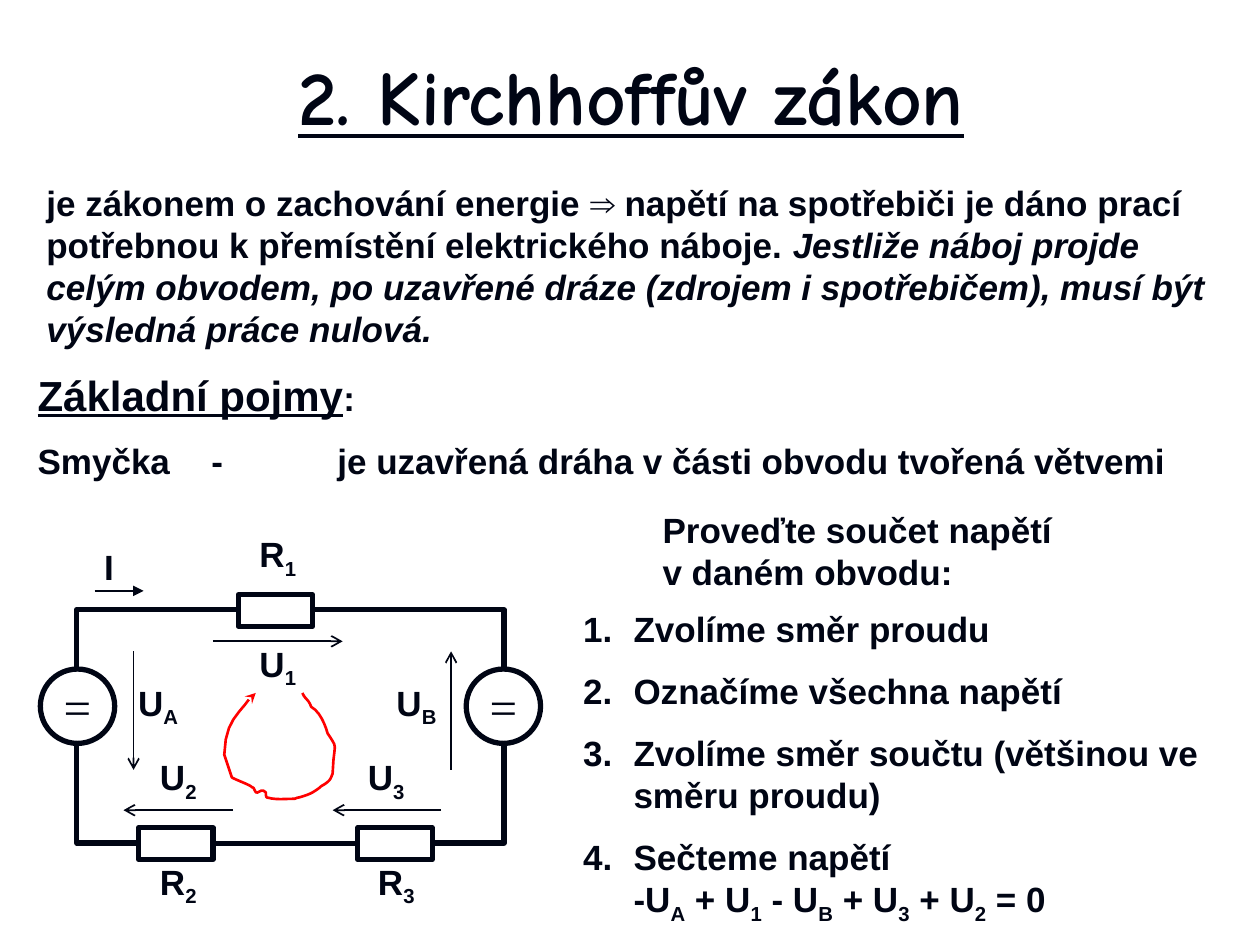
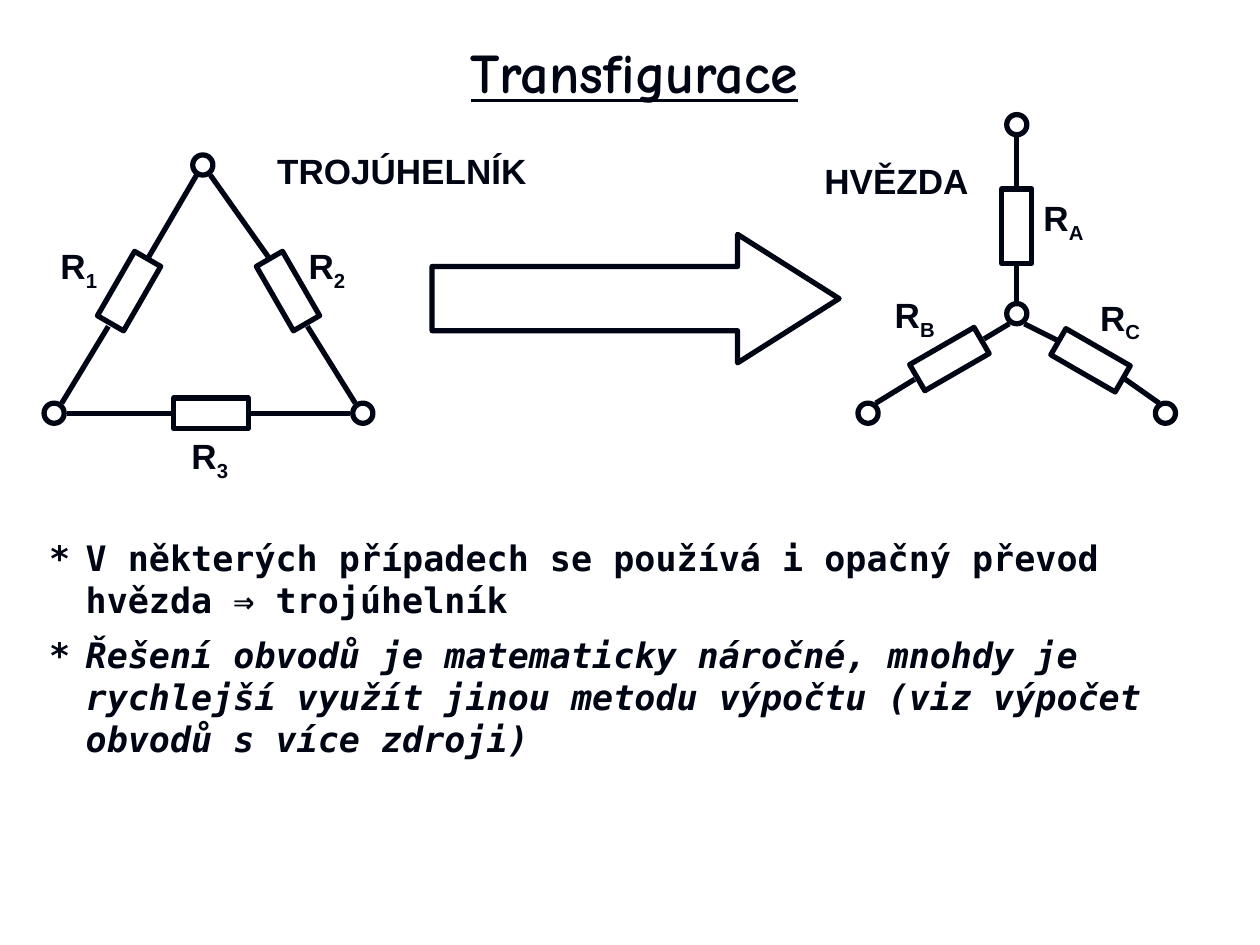
from lxml import etree
from pptx import Presentation
from pptx.dml.color import RGBColor
from pptx.enum.shapes import MSO_CONNECTOR, MSO_SHAPE
from pptx.enum.text import MSO_ANCHOR, PP_ALIGN
from pptx.oxml.ns import qn
from pptx.util import Inches, Pt

STRAIGHT = MSO_CONNECTOR.STRAIGHT
RECTANGLE, OVAL, RIGHT_ARROW = MSO_SHAPE.RECTANGLE, MSO_SHAPE.OVAL, MSO_SHAPE.RIGHT_ARROW
LEFT, CENTER = PP_ALIGN.LEFT, PP_ALIGN.CENTER
TOP, MIDDLE = MSO_ANCHOR.TOP, MSO_ANCHOR.MIDDLE
TOP_SIDE, LEFT_SIDE, BOTTOM_SIDE, RIGHT_SIDE = range(4)

INK = "000514"
RED = "FF0000"
TITLE_FONT, BODY_FONT, NOTE_FONT, SIGN_FONT = "Comic Neue", "Arial", "DejaVu Sans Mono", "Times New Roman"
ITALIC = {"italic": True}
HEADING = {"underline": True, "size": Pt(24)}

LOOP_START = (2.4, 5.5)
LOOP_CURVES = [
    (2.42, 5.55, 2.45, 5.55, 2.47, 5.61), (2.54, 5.65, 2.58, 5.75, 2.6, 5.82),
    (2.69, 5.96, 2.65, 5.87, 2.64, 6.14), (2.62, 6.19, 2.62, 6.2, 2.55, 6.24),
    (2.53, 6.26, 2.48, 6.29, 2.48, 6.29), (2.44, 6.31, 2.41, 6.32, 2.37, 6.33),
    (2.36, 6.33, 2.34, 6.34, 2.34, 6.34), (2.26, 6.34, 2.19, 6.35, 2.12, 6.33),
    (2.11, 6.33, 2.11, 6.3, 2.11, 6.29), (2.07, 6.24, 2.04, 6.33, 2.02, 6.27),
    (2.01, 6.24, 2.01, 6.26, 1.99, 6.24), (1.98, 6.23, 1.85, 6.18, 1.84, 6.17),
    (1.83, 6.14, 1.79, 6.02, 1.78, 5.99), (1.79, 5.71, 1.89, 5.68, 2, 5.52),
    (2.01, 5.51, 2.03, 5.5, 2.03, 5.5),
]


def color(value):
    return RGBColor.from_string(value)


def curve_points(start, curves, steps=6):
    points = [start]
    for x1, y1, x2, y2, x3, y3 in curves:
        x0, y0 = points[-1]
        for step in range(1, steps + 1):
            t = step / steps
            a, b, c, d = (1 - t) ** 3, 3 * t * (1 - t) ** 2, 3 * t * t * (1 - t), t ** 3
            points.append((a * x0 + b * x1 + c * x2 + d * x3, a * y0 + b * y1 + c * y2 + d * y3))
    return points


class CircuitDeck:
    """Draws text and circuit elements in one shared style on the current slide."""

    def __init__(self):
        self.presentation = Presentation()
        self.presentation.slide_width = Inches(10)
        self.presentation.slide_height = Inches(7.5)
        self.slide = None

    def new_slide(self, title, left, top, width, height, size):
        self.slide = self.presentation.slides.add_slide(self.presentation.slide_layouts[6])
        self.text([[(title, {"underline": True})]], left, top, width, height,
                  size=size, font=TITLE_FONT, align=CENTER, anchor=MIDDLE)

    def add_run(self, paragraph, text, points, font, formats, bold=True, subscript=False):
        run = paragraph.add_run()
        run.text = text
        run.font.size, run.font.name, run.font.bold = Pt(points), font, bold
        run.font.color.rgb = color(INK)
        for name, value in formats.items():
            setattr(run.font, name, value)
        if subscript:
            run._r.get_or_add_rPr().set("baseline", "-25000")

    def fill_paragraph(self, paragraph, runs, size, font):
        for text, formats in runs:
            first, *rest = text.split("_")
            self.add_run(paragraph, first, size, font, formats)
            for piece in rest:
                self.add_run(paragraph, piece[0], size, font, formats, subscript=True)
                if piece[1:]:
                    self.add_run(paragraph, piece[1:], size, font, formats)

    def text(self, paragraphs, left, top, width, height, size=20, font=BODY_FONT, align=LEFT,
             anchor=TOP, wrap=True, hanging=0, gap=11.5, margin=None):
        box = self.slide.shapes.add_textbox(Inches(left), Inches(top), Inches(width), Inches(height))
        frame = box.text_frame
        frame.word_wrap, frame.vertical_anchor = wrap, anchor
        if margin is not None:
            frame.margin_left = frame.margin_right = Inches(margin)
            frame.margin_top = frame.margin_bottom = Inches(margin)
        for index, runs in enumerate(paragraphs):
            paragraph = frame.add_paragraph() if index else frame.paragraphs[0]
            paragraph.alignment = align
            if index:
                paragraph.space_before = Pt(gap)
            if hanging:
                properties = paragraph._p.get_or_add_pPr()
                properties.set("marL", str(Inches(hanging)))
                properties.set("indent", str(-Inches(hanging)))
            self.fill_paragraph(paragraph, runs, size, font)
        return frame

    def label(self, text, left, top, width=0.39, height=0.39):
        self.text([[(text, {})]], left, top, width, height,
                  align=CENTER, anchor=MIDDLE, wrap=False, margin=0.04)

    def style_line(self, shape, width, line_color=INK, head=None):
        shape.line.color.rgb = color(line_color)
        shape.line.width = Pt(width)
        if head:
            etree.SubElement(shape._element.spPr.find(qn("a:ln")), qn("a:tailEnd"), type=head)

    def outline(self, kind, left, top, width, height, rotation=0):
        shape = self.slide.shapes.add_shape(
            kind, Inches(left), Inches(top), Inches(width), Inches(height))
        shape.shadow.inherit = False
        shape.fill.background()
        shape.rotation = rotation
        self.style_line(shape, 3)
        return shape

    def resistor(self, left, top, height=0.24, rotation=0):
        return self.outline(RECTANGLE, left, top, 0.59, height, rotation)

    def source(self, left, top):
        shape = self.outline(OVAL, left, top, 0.59, 0.59)
        frame = shape.text_frame
        frame.word_wrap, frame.vertical_anchor = False, MIDDLE
        frame.paragraphs[0].alignment = CENTER
        self.add_run(frame.paragraphs[0], "=", 28, SIGN_FONT, {}, bold=False)

    def node(self, left, top):
        self.outline(OVAL, left, top, 0.16, 0.16)

    def line(self, x1, y1, x2, y2, width=3, head=None, begin=None, end=None):
        connector = self.slide.shapes.add_connector(
            STRAIGHT, Inches(x1), Inches(y1), Inches(x2), Inches(y2))
        if begin:
            connector.begin_connect(*begin)
        if end:
            connector.end_connect(*end)
        self.style_line(connector, width, head=head)
        etree.SubElement(connector._element.spPr, qn("a:effectLst"))

    def arrow(self, x1, y1, x2, y2, head="arrow"):
        self.line(x1, y1, x2, y2, width=1, head=head)

    def polyline(self, points, width=3, line_color=INK, head=None):
        points = [(Inches(x), Inches(y)) for x, y in points]
        builder = self.slide.shapes.build_freeform(*points[0])
        builder.add_line_segments(points[1:], close=False)
        shape = builder.convert_to_shape()
        shape.shadow.inherit = False
        shape.fill.background()
        self.style_line(shape, width, line_color, head)


def draw_kirchhoff_circuit(deck):
    for left in (0.32, 3.7):
        deck.source(left, 5.31)
    deck.resistor(1.89, 4.72, 0.25)
    resistor_2, resistor_3 = [deck.resistor(left, 6.57, 0.25) for left in (1.1, 2.84)]

    left, right, upper, lower = 0.61, 4, 4.84, 6.69
    for wire in (
        [(left, 5.29), (left, upper), (1.87, upper)],
        [(2.5, upper), (right, upper), (right, 5.29)],
        [(left, 5.92), (left, lower), (1.08, lower)],
        [(3.45, lower), (right, lower), (right, 5.92)],
    ):
        deck.polyline(wire)
    deck.line(1.69, lower, 2.84, lower, begin=(resistor_2, RIGHT_SIDE), end=(resistor_3, LEFT_SIDE))

    for voltage in ((1.06, 5.17, 1.06, 6.11), (3.58, 6.11, 3.58, 5.17), (1.69, 5.09, 2.72, 5.09),
                    (3.5, 6.43, 2.64, 6.43), (1.85, 6.43, 0.98, 6.43)):
        deck.arrow(*voltage)
    deck.arrow(0.75, 4.69, 1.14, 4.69, head="triangle")
    deck.polyline(curve_points(LOOP_START, LOOP_CURVES), 1.5, RED, "stealth")

    for name, x, y in (("U_1", 2.01, 5.09), ("U_2", 1.22, 5.99), ("U_3", 2.87, 5.99),
                       ("R_1", 2.01, 4.22), ("R_2", 1.22, 6.82), ("R_3", 2.95, 6.82),
                       ("I", 0.67, 4.3)):
        deck.label(name, x, y)
    for name, x in (("U_A", 0.98), ("U_B", 3.03)):
        deck.label(name, x, 5.4, 0.55)


def build_kirchhoff_slide(deck):
    deck.new_slide("2. Kirchhoffův zákon", 0.51, 0.28, 9, 0.95, 44)
    deck.text([[
        ("je zákonem o zachování energie ⇒ napětí na spotřebiči je dáno prací potřebnou "
         "k přemístění elektrického náboje. ", {}),
        ("Jestliže náboj projde celým obvodem, po uzavřené dráze (zdrojem i spotřebičem), "
         "musí být výsledná práce nulová.", ITALIC),
    ]], 0.27, 1.39, 9.53, 1.43)
    deck.text([
        [("Základní pojmy", HEADING), (":", {})],
        [("Smyčka\t-\t\tje uzavřená dráha v části obvodu tvořená větvemi", {})],
    ], 0.2, 2.88, 9.53, 1, hanging=1.38)
    draw_kirchhoff_circuit(deck)
    deck.text([[("Proveďte součet napětí v daném obvodu:", {})]], 5.16, 3.99, 3.39, 0.77)
    steps = deck.text([[(step, {})] for step in (
        "1.\tZvolíme směr proudu",
        "2.\tOznačíme všechna napětí",
        "3.\tZvolíme směr součtu (většinou ve směru proudu)",
        "4.\tSečteme napětí",
        "\t-U_A + U_1 - U_B + U_3 + U_2 = 0",
    )], 4.53, 4.77, 5.2, 2.6, hanging=0.4)
    steps.paragraphs[-1].space_before = Pt(0)


def draw_star(deck):
    deck.resistor(7.24, 2.73, rotation=330)
    deck.resistor(8.36, 2.74, rotation=30)
    resistor_a = deck.outline(RECTANGLE, 7.95, 1.5, 0.24, 0.59)
    for x, y in ((7.99, 2.41), (7.99, 0.91), (6.81, 3.2), (9.17, 3.2)):
        deck.node(x, y)
    deck.line(8.07, 1.09, 8.07, 1.5, end=(resistor_a, TOP_SIDE))
    deck.line(8.07, 2.09, 8.07, 2.39, begin=(resistor_a, BOTTOM_SIDE))
    for wire in ((8.01, 2.57, 7.81, 2.69), (7.26, 3.01, 6.95, 3.2),
                 (8.13, 2.57, 8.39, 2.7), (8.93, 3.01, 9.2, 3.2)):
        deck.line(*wire)
    for name, x, y in (("R_B", 7.05, 2.31), ("R_A", 8.23, 1.54), ("R_C", 8.68, 2.33)):
        deck.label(name, x, y, 0.42, 0.42)


def draw_triangle(deck):
    deck.resistor(1.99, 2.19, rotation=60)
    deck.resistor(0.73, 2.19, rotation=300)
    resistor_3 = deck.resistor(1.38, 3.16)
    for x, y in ((2.8, 3.2), (0.35, 3.2), (1.53, 1.23)):
        deck.node(x, y)
    for wire in ((1.56, 1.39, 1.18, 2.04), (0.86, 2.59, 0.49, 3.2),
                 (1.67, 1.39, 2.13, 2.04), (2.44, 2.59, 2.82, 3.2)):
        deck.line(*wire)
    deck.line(0.53, 3.28, 1.38, 3.28, end=(resistor_3, LEFT_SIDE))
    deck.line(2.78, 3.28, 1.97, 3.28, end=(resistor_3, RIGHT_SIDE))
    for name, x, y in (("R_3", 1.47, 3.43), ("R_2", 2.4, 1.92), ("R_1", 0.43, 1.92)):
        deck.label(name, x, y, height=0.42)


def build_transfiguration_slide(deck):
    deck.new_slide("Transfigurace", 0.43, 0.21, 9.21, 0.71, 32)
    deck.text([
        [("*\tV některých případech se používá i opačný převod hvězda ⇒ trojúhelník", {})],
        [("*\t", {}),
         ("Řešení obvodů je matematicky náročné, mnohdy je rychlejší využít jinou metodu "
          "výpočtu (viz výpočet obvodů s více zdroji)", ITALIC)],
    ], 0.35, 4.22, 9.37, 1.19, font=NOTE_FONT, hanging=0.29, gap=7, margin=0.04)
    deck.label("HVĚZDA", 6.5, 1.23, 1.23, 0.41)
    draw_star(deck)
    draw_triangle(deck)
    deck.label("TROJÚHELNÍK", 2.16, 1.15, 2.06, 0.41)
    arrow = deck.outline(RIGHT_ARROW, 3.43, 1.86, 3.23, 1.02)
    arrow.adjustments[0], arrow.adjustments[1] = 0.5, 0.79


def main():
    deck = CircuitDeck()
    build_kirchhoff_slide(deck)
    build_transfiguration_slide(deck)
    deck.presentation.save("out.pptx")


if __name__ == "__main__":
    main()
